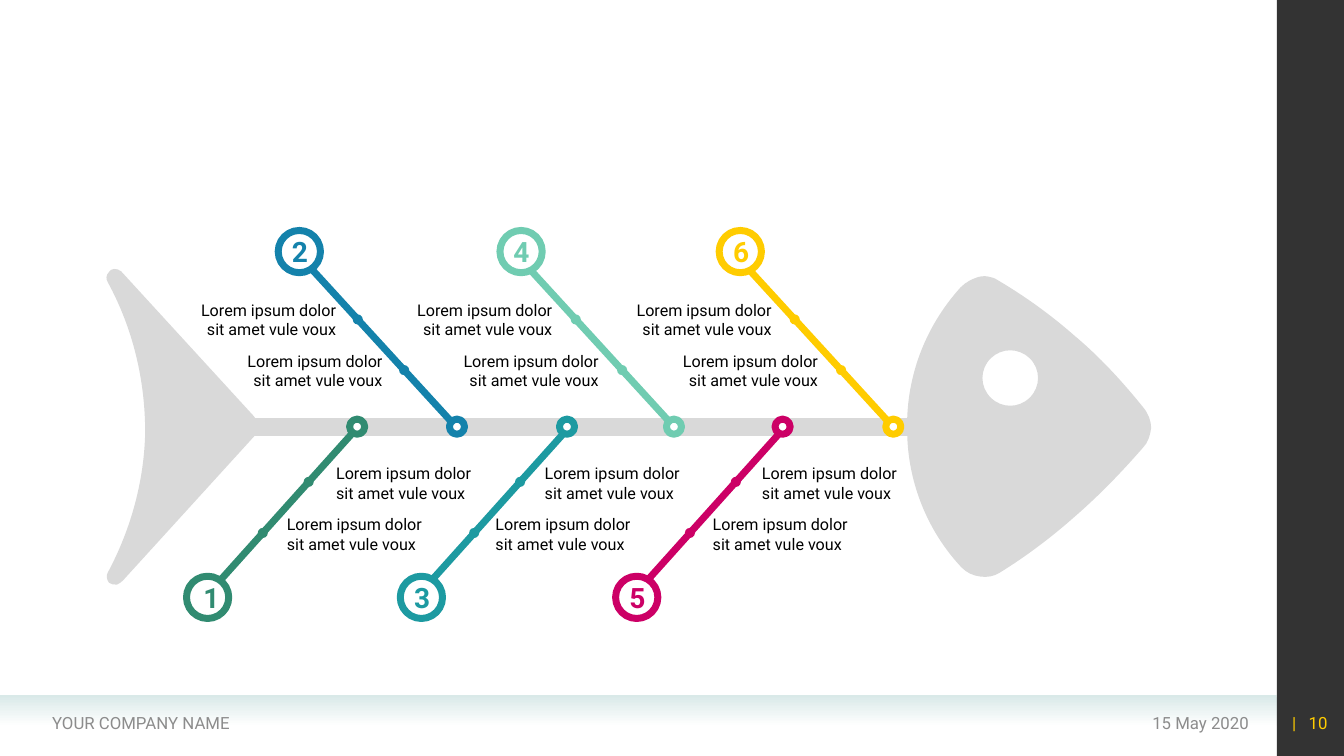
from dataclasses import dataclass

from lxml import etree
from pptx import Presentation
from pptx.dml.color import RGBColor
from pptx.enum.shapes import MSO_CONNECTOR, MSO_SHAPE
from pptx.enum.text import MSO_ANCHOR, MSO_AUTO_SIZE, PP_ALIGN
from pptx.oxml.ns import qn
from pptx.util import Pt

STRAIGHT = MSO_CONNECTOR.STRAIGHT
OVAL, RECTANGLE = MSO_SHAPE.OVAL, MSO_SHAPE.RECTANGLE
MIDDLE = MSO_ANCHOR.MIDDLE
GROW, FIXED = MSO_AUTO_SIZE.SHAPE_TO_FIT_TEXT, MSO_AUTO_SIZE.NONE
LEFT, CENTER, RIGHT = PP_ALIGN.LEFT, PP_ALIGN.CENTER, PP_ALIGN.RIGHT

WHITE = RGBColor(0xFF, 0xFF, 0xFF)
BLACK = RGBColor(0x00, 0x00, 0x00)
CHARCOAL = RGBColor(0x33, 0x33, 0x33)
MIST = RGBColor(0xD9, 0xE9, 0xE8)
FISH_GREY = RGBColor(0xD9, 0xD9, 0xD9)
FOOTER_GREY = RGBColor(0x8C, 0x8C, 0x8C)
GREEN = RGBColor(0x31, 0x8B, 0x71)
BLUE = RGBColor(0x14, 0x82, 0xAB)
TEAL = RGBColor(0x1D, 0x9A, 0xA1)
MINT = RGBColor(0x70, 0xCC, 0xB1)
MAGENTA = RGBColor(0xCC, 0x00, 0x66)
YELLOW = RGBColor(0xFF, 0xCC, 0x00)

FONT = "Roboto"
CAUSE = "Lorem ipsum dolor sit amet vule voux"
SPINE_Y = 304.8
BONE_WIDTH = 5


@dataclass
class Side:
    root_y: float
    tip_dx: float
    tip_y: float
    badge_y: float
    node_ys: tuple
    cause_top: float
    cause_dx: float
    align: PP_ALIGN


UPPER = Side(304.6, -103.5, 191.5, 179.7, (228.2, 264.4), 213, 33.1, RIGHT)
LOWER = Side(306.7, -99.6, 417.6, 426.7, (344.2, 380.7), 329.6, -35.2, LEFT)

BONES = [
    (1, GREEN, LOWER, 254.2, 255.1, 148.3, 237.2, 20.9),
    (2, BLUE, UPPER, 325.5, 326.4, 213.8, 133.6, 25.2),
    (3, TEAL, LOWER, 405.2, 405, 301, 386.2, 25.2),
    (4, MINT, UPPER, 481.2, 481.4, 372.2, 288, 25.9),
    (5, MAGENTA, LOWER, 559.3, 559, 454.8, 541.4, 25.2),
    (6, YELLOW, UPPER, 637.6, 638.1, 528.8, 444.7, 25.2),
]

HEAD = [
    (702.7, 197.3),
    (701.3, 197.3, 699.8, 197.6, 698.4, 198),
    (694.1, 199.4, 689.8, 201.6, 686.2, 205.2),
    (660.2, 234, 646.6, 270.7, 648, 309.6),
    (648.7, 344.9, 662.4, 379.4, 686.9, 405.4),
    (690.5, 409, 694.8, 411.1, 699.8, 411.8),
    (704.9, 412.6, 709.9, 411.8, 714.2, 409),
    (733, 397.4, 751, 383.8, 768.2, 368.6),
    (785.5, 353.5, 801.4, 337, 816.5, 319.7),
    (820.1, 316.1, 821.5, 311, 822.2, 306),
    (822.2, 300.2, 820.1, 295.2, 816.5, 290.9),
    (801.4, 272.2, 785.5, 254.9, 767.5, 239.8),
    (750.2, 224.6, 732.2, 211.7, 712.8, 200.2),
    (710.6, 198.7, 708.5, 198, 706.3, 197.7),
    (705.6, 197.3, 704.2, 197.3, 702.7, 197.3),
]
EYE = [
    (721.6, 250.2),
    (726.6, 250.2, 731.7, 252.2, 735.6, 256),
    (743.4, 263.8, 743.4, 276.2, 735.6, 284),
    (727.8, 291.8, 715.4, 291.8, 707.6, 284),
    (699.8, 276.2, 699.8, 263.8, 707.6, 256),
    (711.5, 252.2, 716.5, 250.2, 721.6, 250.2),
]
TAIL = [
    (77, 201.6),
    (75.6, 199.4, 75.6, 196.6, 77.8, 194.4),
    (79.2, 191.5, 83.5, 191.5, 86.4, 193.7),
    (181.4, 297.4),
    (182.9, 299.5, 184.3, 302.4, 183.6, 305.3),
    (183.6, 307.4, 182.9, 308.9, 182.2, 311),
    (87.8, 414.7),
    (86.4, 416.2, 85, 416.9, 83.5, 417.6),
    (81.4, 417.6, 79.2, 417.6, 77.8, 416.2),
    (76.3, 414, 75.6, 411.1, 77, 409),
    (93.6, 378, 103, 343.4, 103.7, 308.9),
    (103.7, 271.4, 95, 234.7, 77, 201.6),
]


def paint(shape, fill):
    shape.shadow.inherit = False
    shape.fill.solid()
    shape.fill.fore_color.rgb = fill
    shape.line.fill.background()


def bend(outline, segments):
    corners = iter(list(outline._element.iter(qn("a:lnTo"))))
    for segment in segments:
        curve = next(corners)
        if len(segment) == 6:
            bezier = etree.Element(qn("a:cubicBezTo"))
            curve.addprevious(bezier)
            for corner in (curve, next(corners), next(corners)):
                bezier.append(corner[0])
                corner.getparent().remove(corner)


def add_outline(slide, *contours):
    builder = slide.shapes.build_freeform(*map(Pt, contours[0][0]))
    for index, (start, *segments) in enumerate(contours):
        if index:
            builder.move_to(*map(Pt, start))
        points = [(Pt(x), Pt(y)) for segment in segments
                  for x, y in zip(segment[::2], segment[1::2])]
        builder.add_line_segments(points, close=True)
    outline = builder.convert_to_shape()
    paint(outline, FISH_GREY)
    bend(outline, [segment for contour in contours for segment in contour[1:]])


def add_block(slide, kind, left, top, width, height, fill):
    block = slide.shapes.add_shape(kind, Pt(left), Pt(top), Pt(width), Pt(height))
    paint(block, fill)
    return block


def add_circle(slide, x, y, size, fill, ring=None):
    circle = add_block(slide, OVAL, x - size / 2, y - size / 2, size, size, fill)
    if ring is not None:
        circle.line.color.rgb = ring
        circle.line.width = Pt(BONE_WIDTH)


def add_line(slide, x1, y1, x2, y2, color, width):
    line = slide.shapes.add_connector(STRAIGHT, Pt(x1), Pt(y1), Pt(x2), Pt(y2))
    line.line.color.rgb = color
    line.line.width = Pt(width)
    etree.SubElement(line._element.spPr, qn("a:effectLst"))


def add_text(slide, left, top, width, height, text, size, color, align,
             inset=(7.2, 3.6), wrap=True, bold=False, fit=GROW):
    box = slide.shapes.add_textbox(Pt(left), Pt(top), Pt(width), Pt(height))
    frame = box.text_frame
    frame.word_wrap = wrap
    frame.auto_size = fit
    frame.vertical_anchor = MIDDLE
    frame.margin_left = frame.margin_right = Pt(inset[0])
    frame.margin_top = frame.margin_bottom = Pt(inset[1])
    paragraph = frame.paragraphs[0]
    paragraph.text = text
    paragraph.alignment = align
    paragraph.font.name = FONT
    paragraph.font.size = Pt(size)
    paragraph.font.bold = bold
    paragraph.font.color.rgb = color
    return paragraph


def add_bone(slide, number, color, side, root_x, joint_x, badge_x, cause_left, digit_width):
    add_line(slide, root_x, side.root_y, root_x + side.tip_dx, side.tip_y,
             color, BONE_WIDTH)
    add_circle(slide, joint_x, SPINE_Y, 10.8, WHITE, color)
    for index, node_y in enumerate(side.node_ys):
        share = (node_y - side.root_y) / (side.tip_y - side.root_y)
        add_circle(slide, root_x + share * side.tip_dx, node_y, 7.2, color)
        add_text(slide, cause_left + index * side.cause_dx,
                 side.cause_top + index * 36.4, 109.4, 31,
                 CAUSE, 11.5, BLACK, side.align, inset=(2.9, 1.4))
    add_circle(slide, badge_x, side.badge_y, 30.2, WHITE, color)
    add_text(slide, badge_x + 0.3 - digit_width / 2, side.badge_y - 15.8,
             digit_width, 31.6, str(number), 20, color, CENTER, wrap=False, bold=True)


def add_footer(slide, left, width, text, color, align):
    return add_text(slide, left, 501.8, width, 28.8, text, 12, color, align, fit=FIXED)


def add_frame(slide):
    band = add_block(slide, RECTANGLE, 0, 496.4, 912, 22.3, MIST)
    band.fill.gradient()
    band.fill.gradient_angle = 270
    for stop, color, position in zip(band.fill.gradient_stops, (MIST, WHITE), (0, 1)):
        stop.color.rgb = color
        stop.position = position
    add_block(slide, RECTANGLE, 912, 0, 48, 540, CHARCOAL)
    add_footer(slide, 655.2, 244, "15 May 2020", FOOTER_GREY, RIGHT)
    add_footer(slide, 30.2, 352.8, "YOUR COMPANY NAME", FOOTER_GREY, LEFT)
    page = add_footer(slide, 907.2, 48.2, "| ", YELLOW, RIGHT)
    page.runs[0]._r.get_or_add_rPr().set("spc", "300")
    page.add_run().text = "10"


def main():
    prs = Presentation()
    prs.slide_width, prs.slide_height = Pt(960), Pt(540)
    slide = prs.slides.add_slide(prs.slide_layouts[6])
    add_frame(slide)
    add_outline(slide, HEAD, EYE)
    add_outline(slide, TAIL)
    add_line(slide, 175, SPINE_Y, 662.4, SPINE_Y, FISH_GREY, 13)
    for bone in BONES:
        add_bone(slide, *bone)
    prs.save("out.pptx")


if __name__ == "__main__":
    main()
